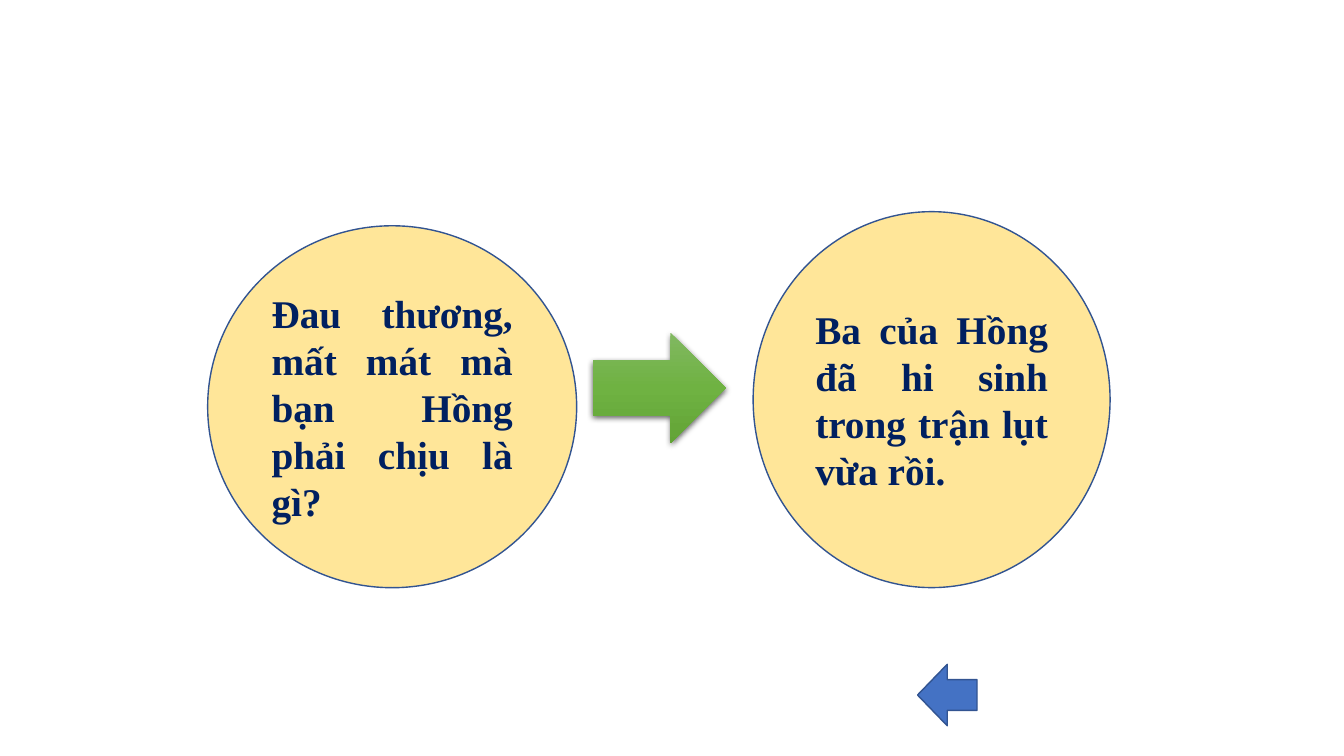
"""Build a question-and-answer slide with two circles and two arrows."""
from lxml import etree
from pptx import Presentation
from pptx.dml.color import RGBColor
from pptx.enum.shapes import MSO_SHAPE
from pptx.enum.text import MSO_ANCHOR, PP_ALIGN
from pptx.oxml import parse_xml
from pptx.oxml.ns import nsdecls, qn
from pptx.util import Pt

PX = 9144
OVAL = MSO_SHAPE.OVAL
RIGHT_ARROW = MSO_SHAPE.RIGHT_ARROW
LEFT_ARROW = MSO_SHAPE.LEFT_ARROW
MIDDLE = MSO_ANCHOR.MIDDLE
JUSTIFY = PP_ALIGN.JUSTIFY

FONT = "Times New Roman"
NAVY, CREAM, BLUE, OUTLINE = "002060", "FFE699", "4472C4", "325491"
GREENS = [(0, "81B861"), (50, "6FB242"), (100, "62A336")]


def color(value):
    """Return the colour for a hex string."""
    return RGBColor.from_string(value)


def add_shape(s, kind, box, fill=None, line=None):
    """Add a preset shape without shadow, with optional fill and line."""
    sp = s.shapes.add_shape(kind, *(n * PX for n in box))
    sp.shadow.inherit = False
    if fill:
        sp.fill.solid()
        sp.fill.fore_color.rgb = color(fill)
    if line:
        sp.line.color.rgb = color(line)
        sp.line.width = Pt(1)
    else:
        sp.line.fill.background()
    return sp


def add_circle(s, box, text):
    """Add a cream circle with bold justified text."""
    sp = add_shape(s, OVAL, box, CREAM, OUTLINE)
    tf = sp.text_frame
    tf.word_wrap = True
    tf.vertical_anchor = MIDDLE
    tf.text = text
    p = tf.paragraphs[0]
    p.alignment = JUSTIFY
    font = p.runs[0].font
    font.name, font.size, font.bold = FONT, Pt(28), True
    font.color.rgb = color(NAVY)


def set_gradient(sp, stops):
    """Fill a shape with a top-to-bottom gradient."""
    sp.fill.gradient()
    sp.fill.gradient_angle = 270
    gs_list = sp._element.spPr.find(qn("a:gradFill")).find(qn("a:gsLst"))
    for gs in list(gs_list):
        gs_list.remove(gs)
    for position, value in stops:
        gs = etree.SubElement(gs_list, qn("a:gs"), pos=str(position * 1000))
        etree.SubElement(gs, qn("a:srgbClr"), val=value)


def set_shadow(sp, blur, distance, opacity):
    """Give a shape a black shadow that falls straight down."""
    sp._element.spPr.find(qn("a:effectLst")).append(parse_xml(
        f'<a:outerShdw {nsdecls("a")} blurRad="{Pt(blur)}" dist="{Pt(distance)}"'
        ' dir="5400000" algn="ctr" rotWithShape="0"><a:srgbClr val="000000">'
        f'<a:alpha val="{opacity * 1000}"/></a:srgbClr></a:outerShdw>'))


def main():
    """Build and save the slide."""
    prs = Presentation()
    prs.slide_width, prs.slide_height = 1333 * PX, 750 * PX
    s = prs.slides.add_slide(prs.slide_layouts[6])
    add_circle(s, (206, 224, 366, 359),
               "Đau thương, mất mát mà bạn Hồng phải chịu là gì?")
    arrow = add_shape(s, RIGHT_ARROW, (588, 330, 132, 110))
    set_gradient(arrow, GREENS)
    set_shadow(arrow, 4.5, 1.5, 63)
    add_circle(s, (747, 210, 354, 373),
               "Ba của Hồng đã hi sinh trong trận lụt vừa rồi.")
    add_shape(s, LEFT_ARROW, (910, 659, 59, 61), BLUE, OUTLINE)
    prs.save("out.pptx")


if __name__ == "__main__":
    main()
